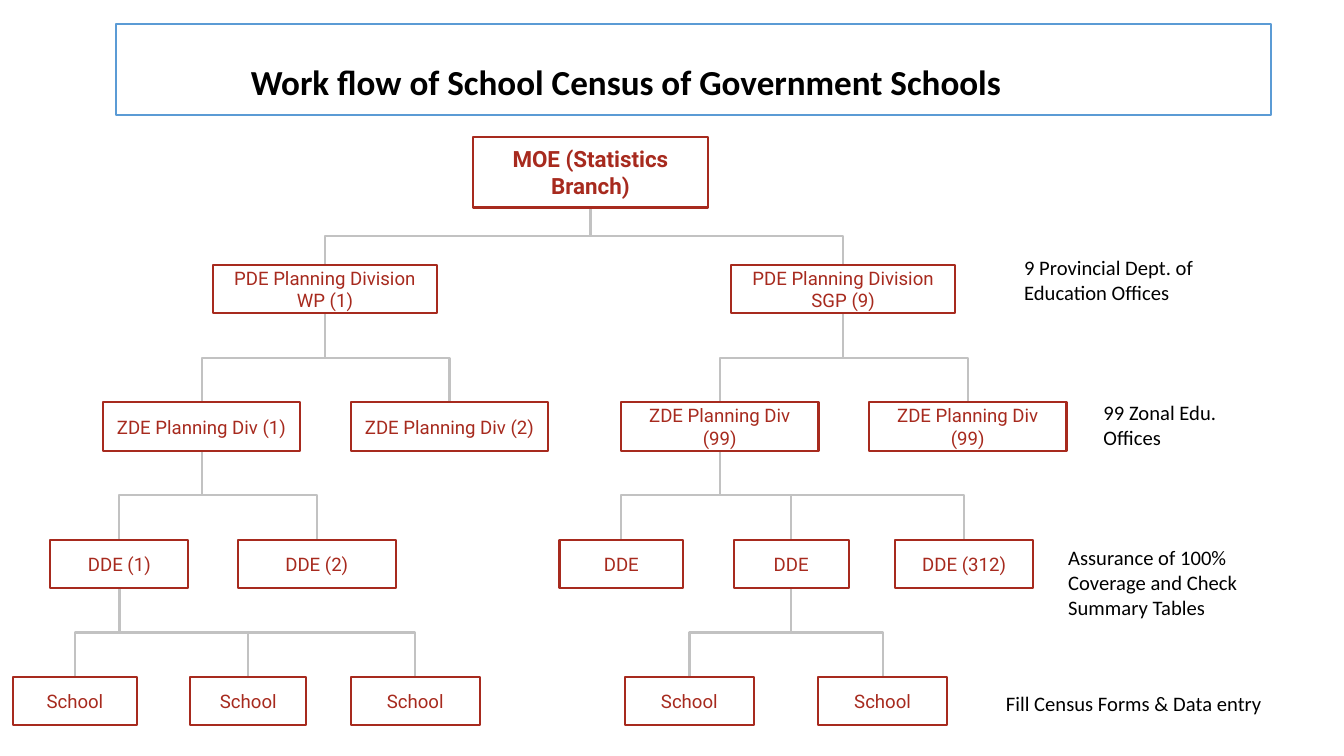
from lxml.etree import SubElement
from pptx import Presentation
from pptx.dml.color import RGBColor
from pptx.enum.shapes import MSO_CONNECTOR, MSO_SHAPE
from pptx.enum.text import MSO_ANCHOR, MSO_AUTO_SIZE, PP_ALIGN
from pptx.oxml.ns import qn
from pptx.util import Cm, Pt

COLOURS = {
    "text": "000000",
    "box": "A72A1E",
    "link": "C2C2C2",
    "frame": "5B9BD5",
}
BOTTOM, TOP = 2, 0
ROW_TOP, ROW_STEP, BOX_HEIGHT = 6.68, 3.46, 1.22
INSET = 0.33

# Levels below the ministry: (label, left, width, index of parent in level above)
LEVELS = [
    [("PDE Planning Division WP (1)", 5.36, 5.66, 0),
     ("PDE Planning Division SGP (9)", 18.42, 5.66, 0)],
    [("ZDE Planning Div (1)", 2.59, 4.98, 0),
     ("ZDE Planning Div (2)", 8.84, 4.98, 0),
     ("ZDE Planning Div (99)", 15.65, 4.98, 1),
     ("ZDE Planning Div (99)", 21.9, 4.98, 1)],
    [("DDE (1)", 1.27, 3.48, 0),
     ("DDE (2)", 5.99, 3.99, 0),
     ("DDE", 14.1, 3.12, 2),
     ("DDE", 18.49, 2.9, 2),
     ("DDE (312)", 22.56, 3.48, 2)],
    [("School", 0.33, 3.12, 0),
     ("School", 4.8, 2.92, 0),
     ("School", 8.84, 3.25, 0),
     ("School", 15.75, 3.25, 3),
     ("School", 20.62, 3.25, 3)],
]

# Side notes: (text, left, top, width, height)
NOTES = [
    ("9 Provincial Dept. of Education Offices", 25.48, 6.1, 6.12, 1.93),
    ("99 Zonal Edu. Offices", 27.48, 9.75, 4.52, 1.93),
    ("Assurance of 100% Coverage and Check Summary Tables", 26.59, 13.41, 6.53, 2.57),
    ("Fill Census Forms & Data entry", 25.02, 17.07, 8.46, 1.32),
]


def colour(name):
    return RGBColor.from_string(COLOURS[name])


def write_text(shape, text, size, font, ink, bold=False, align=PP_ALIGN.LEFT,
               anchor=MSO_ANCHOR.TOP, side=INSET, edge=INSET):
    frame = shape.text_frame
    frame.word_wrap = True
    frame.auto_size = MSO_AUTO_SIZE.NONE
    frame.vertical_anchor = anchor
    frame.margin_left = frame.margin_right = Cm(side)
    frame.margin_top = frame.margin_bottom = Cm(edge)
    para = frame.paragraphs[0]
    para.alignment = align
    span = para.add_run()
    span.text = text
    span.font.size = Pt(size)
    span.font.name = font
    span.font.bold = bold
    span.font.color.rgb = colour(ink)
    return para


def add_outline(page, left, top, width, height, line, weight):
    box = page.shapes.add_shape(MSO_SHAPE.RECTANGLE, Cm(left), Cm(top), Cm(width), Cm(height))
    box.shadow.inherit = False
    box.fill.background()
    box.line.color.rgb = colour(line)
    box.line.width = Pt(weight)
    return box


def add_office(page, label, left, top, width, height=BOX_HEIGHT, size=13.3, bold=False):
    box = add_outline(page, left, top, width, height, "box", 1.5)
    write_text(box, label, size, "Roboto", "box", bold, PP_ALIGN.CENTER, MSO_ANCHOR.MIDDLE)
    return box


def add_link(page, parent, child):
    """Elbow from the parent's bottom to the child's top, leaving vertically."""
    start_x, start_y = parent.left + parent.width // 2, parent.top + parent.height
    end_x, end_y = child.left + child.width // 2, child.top
    link = page.shapes.add_connector(MSO_CONNECTOR.ELBOW, start_x, start_y, end_x, end_y)
    link.begin_connect(parent, BOTTOM)
    link.end_connect(child, TOP)
    link.line.color.rgb = colour("link")
    link.line.width = Pt(1.5)
    properties = link._element.spPr
    SubElement(properties, qn("a:effectLst"))

    # Turn the elbow so that its first leg runs downwards
    drop, shift = end_y - start_y, abs(end_x - start_x)
    link.left, link.top = (start_x + end_x - drop) // 2, (start_y + end_y - shift) // 2
    link.width, link.height = drop, shift
    transform = properties.get_or_add_xfrm()
    to_right = end_x > start_x
    transform.rot = 270 if to_right else 90
    transform.flipH, transform.flipV = to_right, False

    # Keep links behind the boxes
    page.shapes._spTree.insert(2, link._element)


def add_note(page, text, left, top, width, height):
    note = page.shapes.add_textbox(Cm(left), Cm(top), Cm(width), Cm(height))
    write_text(note, text, 14.7, "Calibri", "text")


def add_title(page, text):
    title = page.shapes.title
    title.left, title.top, title.width, title.height = Cm(5.99), Cm(0.71), Cm(27.58), Cm(2.24)
    para = write_text(title, text, 25.1, "Calibri", "text", True, PP_ALIGN.JUSTIFY,
                      MSO_ANCHOR.MIDDLE, edge=0.18)
    para.line_spacing = 1.4
    para.space_before = Pt(0)
    para.space_after = Pt(10.7)


def add_hierarchy(page):
    parents = [add_office(page, "MOE (Statistics Branch)", 11.91, 3.45, 5.94, 1.78, 16, True)]
    for row, offices in enumerate(LEVELS):
        top = ROW_TOP + row * ROW_STEP
        boxes = []
        for label, left, width, parent in offices:
            box = add_office(page, label, left, top, width)
            add_link(page, parents[parent], box)
            boxes.append(box)
        parents = boxes


def main():
    deck = Presentation()
    deck.slide_width, deck.slide_height = Cm(33.87), Cm(19.05)
    page = deck.slides.add_slide(deck.slide_layouts[5])

    # Title and its frame
    add_title(page, "Work flow of School Census of Government Schools")
    add_outline(page, 2.92, 0.61, 29.11, 2.29, "frame", 1)

    # Reporting tree
    add_hierarchy(page)

    # Notes beside the levels
    for note in NOTES:
        add_note(page, *note)

    deck.save("out.pptx")


if __name__ == "__main__":
    main()
